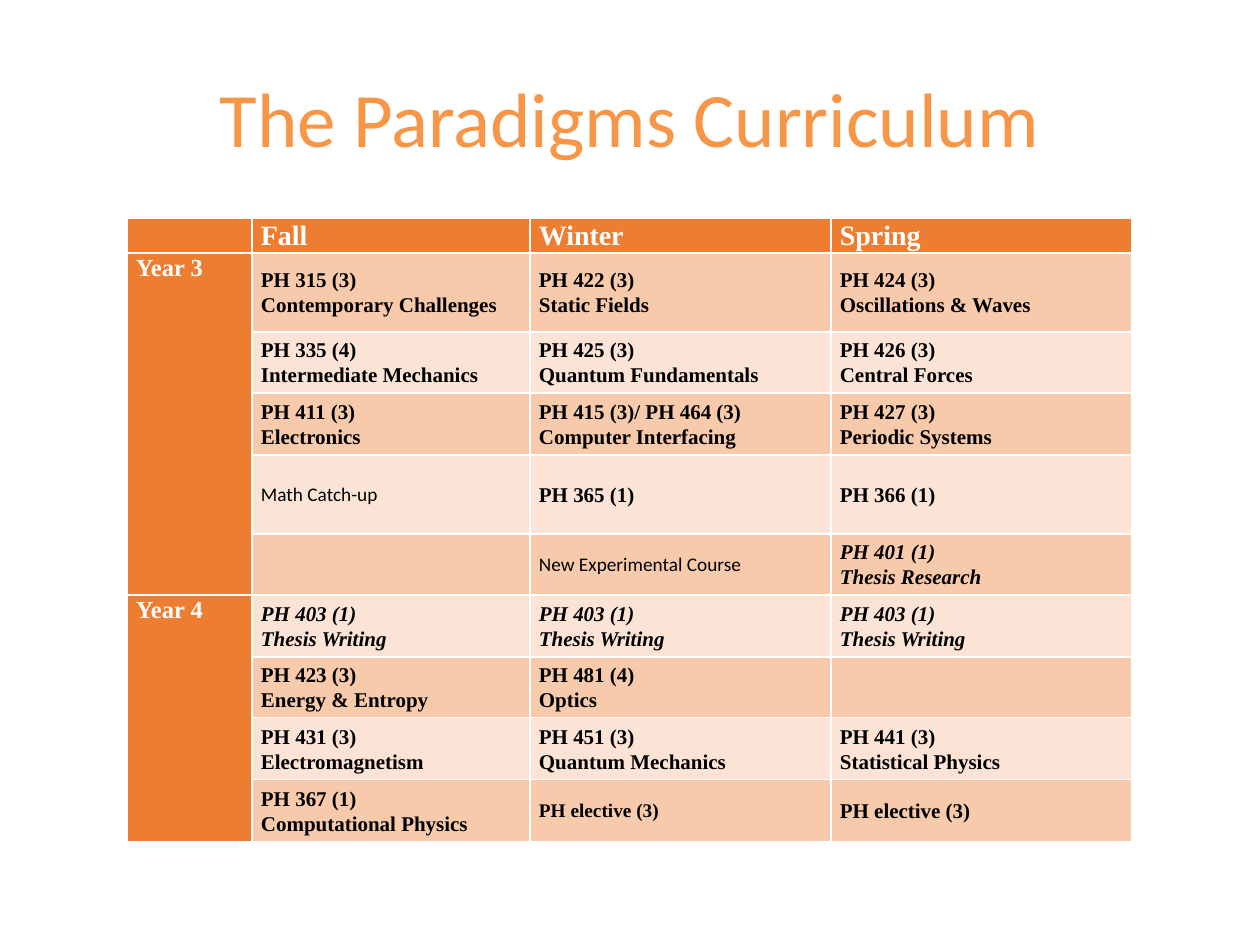
from dataclasses import dataclass
from itertools import pairwise

from lxml.etree import SubElement
from pptx import Presentation
from pptx.dml.color import RGBColor as Color
from pptx.enum.text import MSO_ANCHOR as Anchor, PP_ALIGN as Align
from pptx.oxml.ns import qn
from pptx.util import Emu, Pt

PX = 914400 / 126


def px(length):
    return Emu(round(length * PX))


@dataclass(frozen=True)
class TextStyle:
    size: int
    color: str = "000000"
    font: str = "Times New Roman"
    bold: bool = True
    italic: bool = False


class Theme:
    accent = "ED7D31"
    bands = ("F7CAAC", "FBE4D5")
    border = "FFFFFF"
    title = TextStyle(44, "F79646", "Calibri", bold=False)
    header = TextStyle(16, "FFFFFF")
    year = TextStyle(14, "FFFFFF")
    course = TextStyle(12)
    thesis = TextStyle(12, italic=True)
    small = TextStyle(11)
    note = TextStyle(11, font="Calibri", bold=False)


TERMS = ("", "Fall", "Winter", "Spring")
WRITING = ("PH 403 (1)\nThesis Writing", Theme.thesis)
# Each entry is a text in the course style, or a text with its own style.
YEARS = {
    "Year 3": [
        ("PH 315 (3)\nContemporary Challenges", "PH 422 (3)\nStatic Fields",
         "PH 424 (3)\nOscillations & Waves"),
        ("PH 335 (4)\nIntermediate Mechanics", "PH 425 (3)\nQuantum Fundamentals",
         "PH 426 (3)\nCentral Forces"),
        ("PH 411 (3)\nElectronics", "PH 415 (3)/ PH 464 (3)\nComputer Interfacing",
         "PH 427 (3)\nPeriodic Systems"),
        (("Math Catch-up", Theme.note), "PH 365 (1)", "PH 366 (1)"),
        ("", ("New Experimental Course", Theme.note),
         ("PH 401 (1)\nThesis Research", Theme.thesis)),
    ],
    "Year 4": [
        (WRITING, WRITING, WRITING),
        ("PH 423 (3)\nEnergy & Entropy", "PH 481 (4)\nOptics", ""),
        ("PH 431 (3)\nElectromagnetism", "PH 451 (3)\nQuantum Mechanics",
         "PH 441 (3)\nStatistical Physics"),
        ("PH 367 (1)\nComputational Physics", ("PH elective (3)", Theme.small),
         "PH elective (3)"),
    ],
}
COLUMN_EDGES = (0, 125, 403, 704, 1005)
ROW_EDGES = (0, 35, 114, 175, 237, 316, 377, 439, 500, 562, 624)


def apply_style(paragraph, style):
    font = paragraph.font
    font.name, font.size = style.font, Pt(style.size)
    font.bold, font.italic = style.bold, style.italic
    font.color.rgb = Color.from_string(style.color)


def add_borders(cell):
    properties = cell._tc.get_or_add_tcPr()
    for side in ("lnL", "lnR", "lnT", "lnB"):
        line = SubElement(properties, qn(f"a:{side}"), w=str(Pt(1)))
        fill = SubElement(line, qn("a:solidFill"))
        SubElement(fill, qn("a:srgbClr"), val=Theme.border)


def fill_cell(cell, text, style, fill, anchor):
    add_borders(cell)
    cell.fill.solid()
    cell.fill.fore_color.rgb = Color.from_string(fill)
    cell.margin_left = cell.margin_right = px(9)
    cell.margin_top = cell.margin_bottom = 0
    cell.vertical_anchor = anchor
    cell.text_frame.text = text
    for paragraph in cell.text_frame.paragraphs:
        paragraph.line_spacing = 1.07
        apply_style(paragraph, style)
        if not text:  # keeps an empty cell from stretching its row
            SubElement(paragraph._p, qn("a:endParaRPr"), sz=str(style.size * 100))


def place_title(slide, text, left, top, width, height):
    title = slide.shapes.title
    title.left, title.top, title.width, title.height = map(px, (left, top, width, height))
    title.text_frame.text = text
    title.text_frame.vertical_anchor = Anchor.MIDDLE
    paragraph = title.text_frame.paragraphs[0]
    paragraph.alignment = Align.CENTER
    apply_style(paragraph, Theme.title)


def add_curriculum(slide, left, top):
    frame = slide.shapes.add_table(
        len(ROW_EDGES) - 1, len(COLUMN_EDGES) - 1,
        px(left), px(top), px(COLUMN_EDGES[-1]), px(ROW_EDGES[-1]))
    table = frame.table
    table.first_row = table.horz_banding = False
    for column, (start, end) in zip(table.columns, pairwise(COLUMN_EDGES)):
        column.width = px(end - start)
    for row, (start, end) in zip(table.rows, pairwise(ROW_EDGES)):
        row.height = px(end - start)

    for column, term in enumerate(TERMS):
        fill_cell(table.cell(0, column), term, Theme.header, Theme.accent, Anchor.TOP)
    row = 1
    for year, courses in YEARS.items():
        first = row
        for entries in courses:
            label = year if row == first else ""
            fill_cell(table.cell(row, 0), label, Theme.year, Theme.accent, Anchor.TOP)
            for column, entry in enumerate(entries, 1):
                text, style = (entry, Theme.course) if isinstance(entry, str) else entry
                band = Theme.bands[(row - 1) % 2]
                fill_cell(table.cell(row, column), text, style, band, Anchor.MIDDLE)
            row += 1
        table.cell(first, 0).merge(table.cell(row - 1, 0))


def main():
    presentation = Presentation()
    presentation.slide_width, presentation.slide_height = px(1260), px(945)
    slide = presentation.slides.add_slide(presentation.slide_layouts[5])
    place_title(slide, "The Paradigms Curriculum", 63, 38, 1134, 157)
    add_curriculum(slide, 127, 218)
    presentation.save("out.pptx")


if __name__ == "__main__":
    main()
